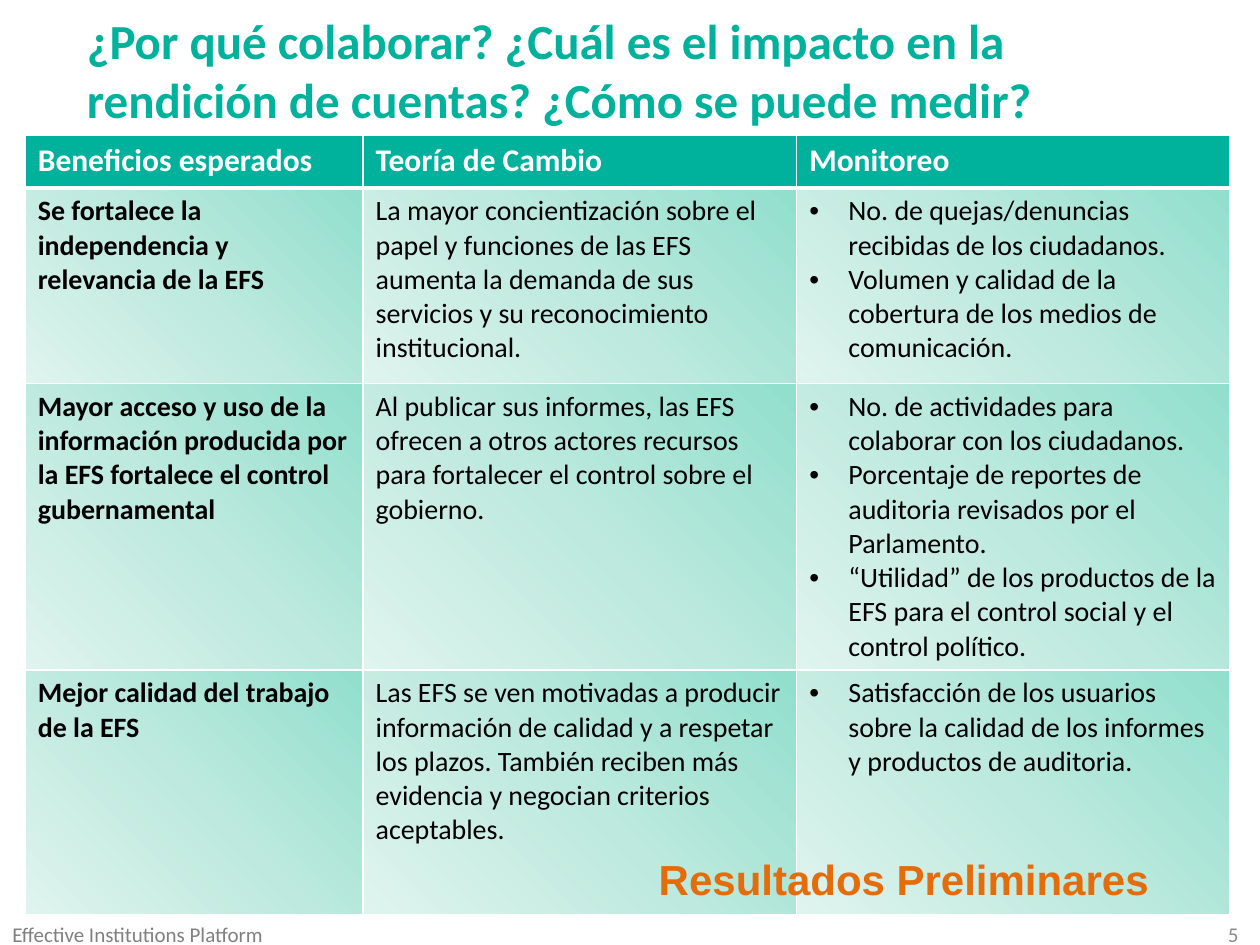
"""Build the slide on expected benefits, theory of change and monitoring."""
from typing import NamedTuple

from lxml import etree
from pptx import Presentation
from pptx.dml.color import RGBColor
from pptx.enum.text import MSO_ANCHOR, MSO_AUTO_SIZE, PP_ALIGN
from pptx.oxml import parse_xml
from pptx.oxml.ns import nsdecls, qn
from pptx.util import Cm, Pt

TOP, MIDDLE = MSO_ANCHOR.TOP, MSO_ANCHOR.MIDDLE
LEFT, RIGHT = PP_ALIGN.LEFT, PP_ALIGN.RIGHT
NO_AUTOFIT = MSO_AUTO_SIZE.NONE
TITLE_ONLY = 5
TEAL, WHITE, BLACK, ORANGE = "00B29C", "FFFFFF", "000000", "E46C0A"
GRADIENT = {0: "91DFCD", 50: "BDE9DE", 100: "DFF4EE"}
HEADER_FORMAT = {"size": Pt(18), "bold": True, "name": "Calibri"}
BODY_FORMAT = {"size": Pt(16), "bold": False, "name": "Calibri"}
COLUMN_WIDTHS = (6.81, 8.74, 8.74)
ROW_HEIGHTS = (1.07, 3.94, 5.69, 4.94)
HEADERS = ("Beneficios esperados", "Teoría de Cambio", "Monitoreo")


class Label(NamedTuple):
    text: str
    box: tuple[float, float, float, float]
    color: str
    font: dict
    alignment: PP_ALIGN = LEFT
    anchor: MSO_ANCHOR = TOP
    wrap: bool = True


class Benefit(NamedTuple):
    name: str
    theory: str
    indicators: tuple[str, ...]


TITLE = Label(
    "¿Por qué colaborar? ¿Cuál es el impacto en la rendición de cuentas? ¿Cómo se puede medir?",
    (1.5, 0.08, 23, 2.64), TEAL, {"size": Pt(28), "bold": True, "name": "Calibri"})
LABELS = (
    Label("5", (19.3, 18.52, 5.92, 0.61), "8C8C8C",
          {"size": Pt(12), "name": "Calibri"}, RIGHT, MIDDLE),
    Label("Effective Institutions Platform", (0, 18.44, 12.29, 0.76), "808080",
          {"size": Pt(12), "name": "Calibri"}),
    Label("Resultados Preliminares", (13.03, 17.07, 10.49, 1.27), ORANGE,
          {"size": Pt(24), "bold": True, "name": "Arial"}, wrap=False),
)
BENEFITS = (
    Benefit(
        "Se fortalece la independencia y relevancia de la EFS",
        "La mayor concientización sobre el papel y funciones de las EFS aumenta "
        "la demanda de sus servicios y su reconocimiento institucional.",
        ("No. de quejas/denuncias recibidas de los ciudadanos.",
         "Volumen y calidad de la cobertura de los medios de comunicación.")),
    Benefit(
        "Mayor acceso y uso de la información producida por la EFS "
        "fortalece el control gubernamental",
        "Al publicar sus informes, las EFS ofrecen a otros actores recursos "
        "para fortalecer el control sobre el gobierno.",
        ("No. de actividades para colaborar con los ciudadanos.",
         "Porcentaje de reportes de auditoria revisados por el Parlamento.",
         "“Utilidad” de los productos de la EFS para el control social "
         "y el control político.")),
    Benefit(
        "Mejor calidad del trabajo de la EFS",
        "Las EFS se ven motivadas a producir información de calidad y a respetar "
        "los plazos. También reciben más evidencia y negocian criterios aceptables.",
        ("Satisfacción de los usuarios sobre la calidad de los informes "
         "y productos de auditoria.",)),
)


def rgb(color: str) -> RGBColor:
    return RGBColor.from_string(color)


def format_font(paragraph, color: str, values: dict) -> None:
    for name, value in values.items():
        setattr(paragraph.font, name, value)
    paragraph.font.color.rgb = rgb(color)


def write_label(shape, label: Label) -> None:
    shape.left, shape.top, shape.width, shape.height = map(Cm, label.box)
    frame = shape.text_frame
    frame.text = label.text
    values = {
        "word_wrap": label.wrap, "auto_size": NO_AUTOFIT, "vertical_anchor": label.anchor,
        "margin_left": Cm(0.25), "margin_right": Cm(0.25),
        "margin_top": Cm(0.13), "margin_bottom": Cm(0.13),
    }
    for name, value in values.items():
        setattr(frame, name, value)
    paragraph = frame.paragraphs[0]
    paragraph.alignment = label.alignment
    format_font(paragraph, label.color, label.font)


def add_bullet(paragraph) -> None:
    properties = paragraph._p.get_or_add_pPr()
    properties.set("marL", str(Cm(0.79)))
    properties.set("indent", str(-Cm(0.79)))
    etree.SubElement(properties, qn("a:buFont"), typeface="Arial")
    etree.SubElement(properties, qn("a:buChar"), char="•")


def add_borders(cell, top: int, bottom: int) -> None:
    properties = cell._tc.get_or_add_tcPr()
    for side, width in {"L": 1, "R": 1, "T": top, "B": bottom}.items():
        properties.append(parse_xml(
            f'<a:ln{side} {nsdecls("a")} w="{Pt(width)}"><a:solidFill>'
            f'<a:srgbClr val="{WHITE}"/></a:solidFill></a:ln{side}>'))


def add_gradient(cell) -> None:
    stops = "".join(f'<a:gs pos="{position * 1000}"><a:srgbClr val="{color}"/></a:gs>'
                    for position, color in GRADIENT.items())
    cell._tc.get_or_add_tcPr().append(parse_xml(
        f'<a:gradFill {nsdecls("a")} rotWithShape="1"><a:gsLst>{stops}</a:gsLst>'
        '<a:path path="circle"><a:fillToRect l="100000" b="100000"/></a:path></a:gradFill>'))


def write_cell(cell, texts: tuple[str, ...], color: str, font: dict,
               bulleted: bool = False) -> None:
    cell.text_frame.text = "\n".join(texts)
    for paragraph in cell.text_frame.paragraphs:
        if bulleted:
            add_bullet(paragraph)
        format_font(paragraph, color, font)


def add_benefit_table(slide) -> None:
    table = slide.shapes.add_table(
        len(ROW_HEIGHTS), len(COLUMN_WIDTHS), Cm(0.51), Cm(2.72),
        Cm(sum(COLUMN_WIDTHS)), Cm(sum(ROW_HEIGHTS))).table
    for column, width in zip(table.columns, COLUMN_WIDTHS):
        column.width = Cm(width)
    for row, height in zip(table.rows, ROW_HEIGHTS):
        row.height = Cm(height)
    for cell, header in zip(table.rows[0].cells, HEADERS):
        add_borders(cell, 1, 3)
        cell.fill.solid()
        cell.fill.fore_color.rgb = rgb(TEAL)
        write_cell(cell, (header,), WHITE, HEADER_FORMAT)
    for index, benefit in enumerate(BENEFITS, 1):
        cells = tuple(table.rows[index].cells)
        for cell in cells:
            add_borders(cell, 3 if index == 1 else 1, 1)
            add_gradient(cell)
        write_cell(cells[0], (benefit.name,), BLACK, BODY_FORMAT | {"bold": True})
        write_cell(cells[1], (benefit.theory,), BLACK, BODY_FORMAT)
        write_cell(cells[2], benefit.indicators, BLACK, BODY_FORMAT, bulleted=True)


def main() -> None:
    presentation = Presentation()
    presentation.slide_width, presentation.slide_height = Cm(25.4), Cm(19.05)
    slide = presentation.slides.add_slide(presentation.slide_layouts[TITLE_ONLY])
    write_label(slide.shapes.title, TITLE)
    add_benefit_table(slide)
    for label in LABELS:
        write_label(slide.shapes.add_textbox(*map(Cm, label.box)), label)
    presentation.save("out.pptx")


if __name__ == "__main__":
    main()
